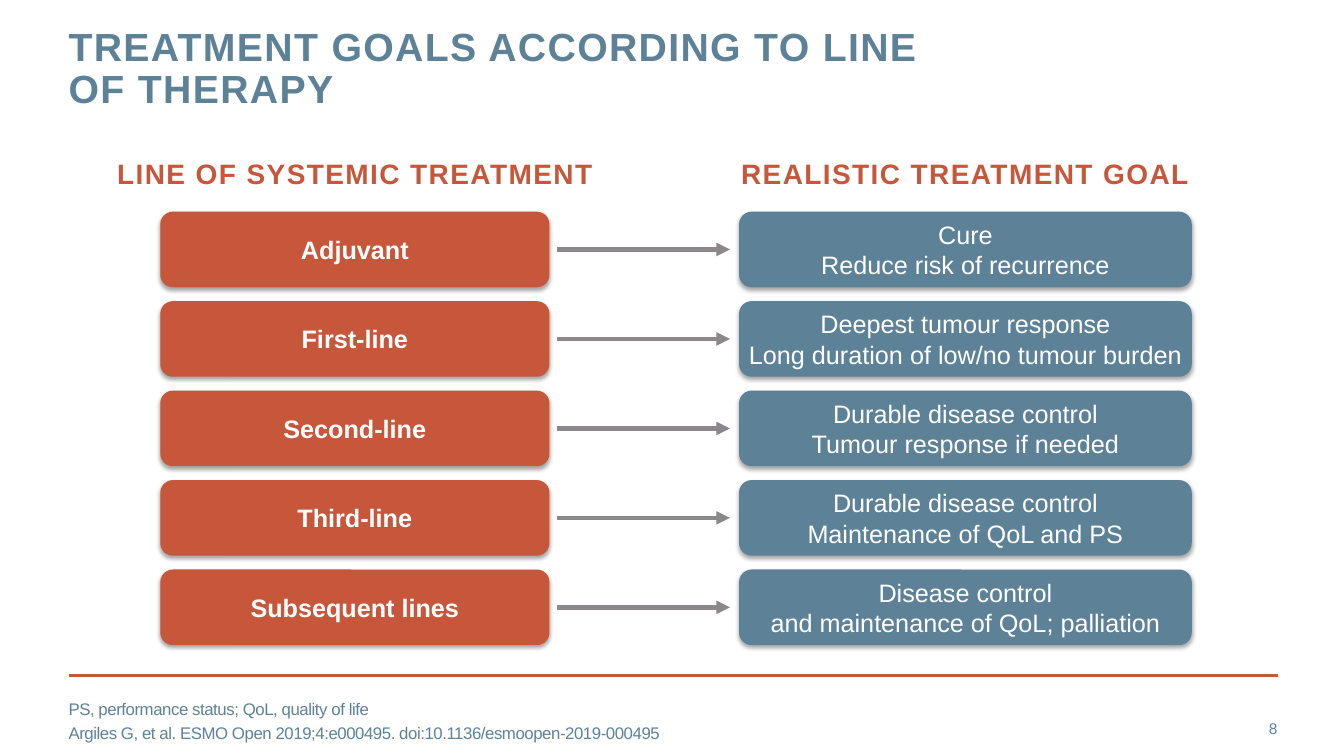
from lxml import etree
from pptx import Presentation
from pptx.dml.color import RGBColor
from pptx.enum.shapes import MSO_CONNECTOR, MSO_SHAPE
from pptx.enum.text import MSO_ANCHOR, MSO_AUTO_SIZE, PP_ALIGN
from pptx.oxml.ns import qn
from pptx.util import Inches, Pt

COLORS = {
    "rust": "C6573B",
    "slate": "5D8298",
    "grey": "8B878B",
    "white": "FFFFFF",
    "black": "000000",
}

# Line of treatment and its realistic goal
GOALS = [
    ("Adjuvant", "Cure\vReduce risk of recurrence"),
    ("First-line", "Deepest tumour response\vLong duration of low/no tumour burden"),
    ("Second-line", "Durable disease control\vTumour response if needed"),
    ("Third-line", "Durable disease control\vMaintenance of QoL and PS"),
    ("Subsequent lines", "Disease control\vand maintenance of QoL; palliation"),
]
FOOTNOTES = (
    "PS, performance status; QoL, quality of life\n"
    "Argiles G, et al. ESMO Open 2019;4:e000495. doi:10.1136/esmoopen-2019-000495"
)

ROW_TOP, ROW_STEP, BOX_HEIGHT = 2.1, 0.8875, 0.75


def rgb(name):
    return RGBColor.from_string(COLORS[name])


def write(frame, text, size, color, bold=False, align=PP_ALIGN.LEFT,
          anchor=MSO_ANCHOR.MIDDLE, spacing=0):
    """Fill a text frame; spacing is the letter spacing in points."""
    frame.text = text
    frame.word_wrap = True
    frame.auto_size = MSO_AUTO_SIZE.NONE
    frame.vertical_anchor = anchor
    frame.margin_left = frame.margin_right = 0
    frame.margin_top = frame.margin_bottom = 0
    for paragraph in frame.paragraphs:
        paragraph.alignment = align
        for run in paragraph.runs:
            run.font.name = "Arial"
            run.font.size = Pt(size)
            run.font.bold = bold
            run.font.color.rgb = rgb(color)
            if spacing:
                run.font._element.set("spc", str(round(spacing * 100)))


def add_title(slide, text):
    title = slide.shapes.title
    title.left, title.top = Inches(0.68), Inches(0.27)
    title.width, title.height = Inches(9.56), Inches(0.88)
    write(title.text_frame, text, 28, "slate", bold=True,
          anchor=MSO_ANCHOR.TOP, spacing=1)
    title.text_frame.paragraphs[0].line_spacing = Pt(30)


def add_label(slide, left, top, width, height, text, size, color, **style):
    label = slide.shapes.add_textbox(
        Inches(left), Inches(top), Inches(width), Inches(height))
    write(label.text_frame, text, size, color, **style)
    return label


def add_soft_shadow(box):
    box.shadow.inherit = False
    effects = box._element.spPr.find(qn("a:effectLst"))
    shadow = etree.SubElement(
        effects, qn("a:outerShdw"), blurRad=str(Pt(3.1)), dist=str(Pt(1.8)),
        dir="5400000", algn="t", rotWithShape="0")
    tint = etree.SubElement(shadow, qn("a:srgbClr"), val=COLORS["black"])
    etree.SubElement(tint, qn("a:alpha"), val="35000")


def add_box(slide, left, top, width, text, fill, bold=False):
    box = slide.shapes.add_shape(
        MSO_SHAPE.ROUNDED_RECTANGLE,
        Inches(left), Inches(top), Inches(width), Inches(BOX_HEIGHT))
    box.fill.solid()
    box.fill.fore_color.rgb = rgb(fill)
    box.line.fill.background()
    add_soft_shadow(box)
    write(box.text_frame, text, 18, "white", bold=bold, align=PP_ALIGN.CENTER)


def add_rule(slide, start, end, y, color, weight, arrow=False):
    rule = slide.shapes.add_connector(
        MSO_CONNECTOR.STRAIGHT, Inches(start), Inches(y), Inches(end), Inches(y))
    rule.line.color.rgb = rgb(color)
    rule.line.width = Pt(weight)
    if arrow:
        etree.SubElement(rule.line._get_or_add_ln(), qn("a:tailEnd"), type="triangle")
    etree.SubElement(rule._element.spPr, qn("a:effectLst"))


def main():
    deck = Presentation()
    deck.slide_width, deck.slide_height = Inches(13.33), Inches(7.5)
    slide = deck.slides.add_slide(deck.slide_layouts.get_by_name("Title Only"))

    # Title and column headings
    add_title(slide, "TREATMENT GOALS ACCORDING TO LINE \vOF THERAPY")
    for left, heading in [(0.68, "LINE OF SYSTEMIC TREATMENT"),
                          (6.73, "REALISTIC TREATMENT GOAL")]:
        add_label(slide, left, 1.55, 5.68, 0.4, heading, 20, "rust", bold=True,
                  align=PP_ALIGN.CENTER, anchor=MSO_ANCHOR.TOP, spacing=1)

    # One row per line of treatment
    for row, (treatment, goal) in enumerate(GOALS):
        top = ROW_TOP + row * ROW_STEP
        add_box(slide, 1.59, top, 3.86, treatment, "rust", bold=True)
        add_box(slide, 7.33, top, 4.49, goal, "slate")
        add_rule(slide, 5.52, 7.24, top + BOX_HEIGHT / 2, "grey", 3.25, arrow=True)

    # Footer
    add_rule(slide, 0.68, 12.68, 6.7, "rust", 2)
    footnotes = add_label(slide, 0.68, 6.95, 11.13, 0.4, FOOTNOTES, 12, "slate",
                          spacing=-0.3)
    footnotes.text_frame.paragraphs[1].space_before = Pt(3)
    add_label(slide, 11.81, 7.03, 0.86, 0.4, "8", 11, "slate", align=PP_ALIGN.RIGHT)

    deck.save("out.pptx")


if __name__ == "__main__":
    main()
